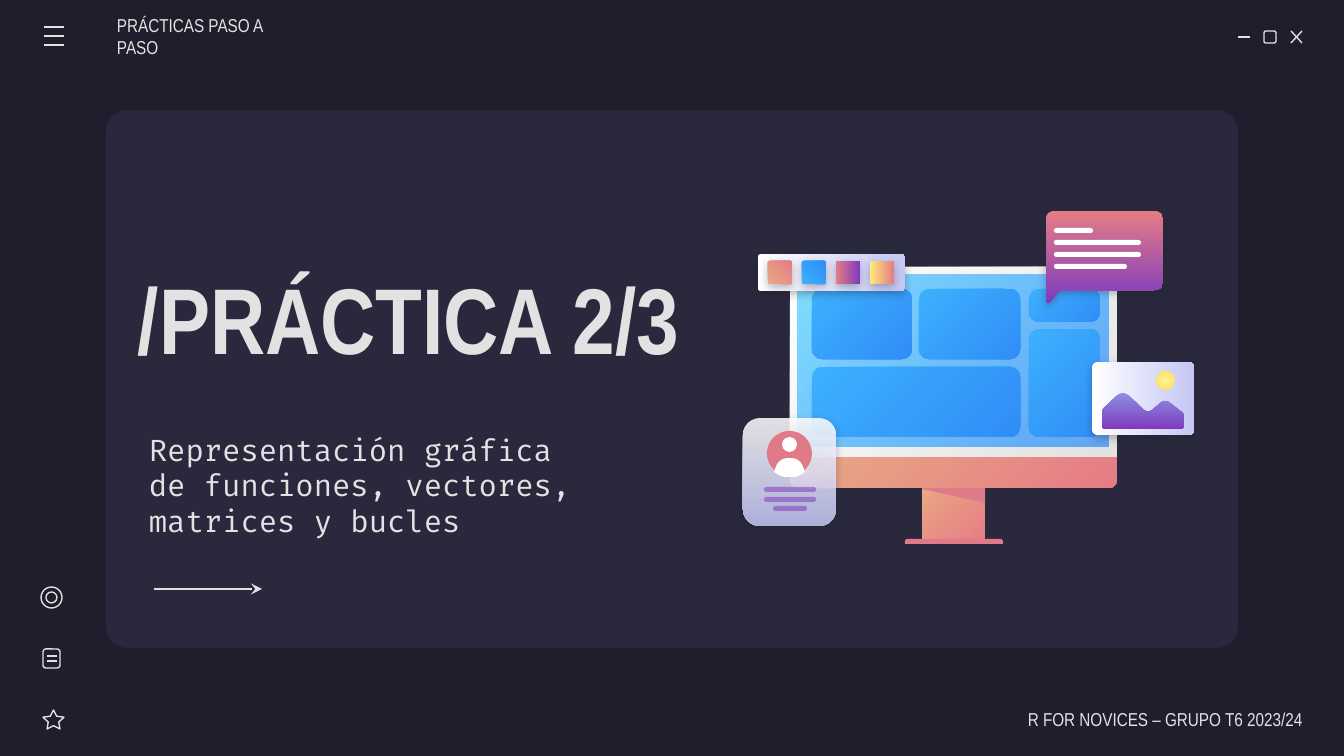
from lxml import etree
from pptx import Presentation, util as u
from pptx.dml.color import RGBColor
from pptx.enum import shapes, text
from pptx.oxml import ns

SCALE = 914400 / 134.4
SHAPE = shapes.MSO_SHAPE
DARK, PANEL, LIGHT, WHITE = "1E1E2C", "29283D", "E2E2E2", "FFFFFF"
ROSE, VIOLET_BAR = "E07A88", "7E3BBE8A"
# Gradients: two colours and a clockwise angle; None means radial.
CORAL = ("E9A984", "E57C85", 45)
BLUE = ("3DB0FD", "308EF7", 45)
SUNSET = ("E57C85", "7E3BBE", 90)
PAPER = (WHITE, "C5C7F4", 90)


def px(n):
    return u.Emu(round(n * SCALE))


def rgb(hex_color):
    return RGBColor.from_string(hex_color[:6])


def child(parent, tag, **attrs):
    return etree.SubElement(parent, ns.qn(tag), attrs)


def add_alpha(clr, hex_color):
    """Apply the optional last two hex digits as opacity."""
    if len(hex_color) == 8:
        child(clr, "a:alpha", val=str(round(int(hex_color[6:], 16) / 255 * 100) * 1000))


def style(sp, paint=None, shadow=False, line=None):
    sp.shadow.inherit = False
    spPr = sp._element.spPr
    if paint is None:
        sp.fill.background()
    elif isinstance(paint, str):
        sp.fill.solid()
        sp.fill.fore_color.rgb = rgb(paint)
        add_alpha(spPr.find(".//" + ns.qn("a:srgbClr")), paint)
    else:
        *colors, angle = paint
        sp.fill.gradient()
        for stop, c in zip(sp.fill.gradient_stops, colors):
            stop.color.rgb = rgb(c)
        for clr, c in zip(spPr.findall(".//" + ns.qn("a:srgbClr")), colors):
            add_alpha(clr, c)
        if angle is None:
            grad = spPr.find(ns.qn("a:gradFill"))
            grad.remove(grad.find(ns.qn("a:lin")))
            radial = child(grad, "a:path", path="circle")
            child(radial, "a:fillToRect", **dict.fromkeys("ltrb", "50000"))
        else:
            sp.fill.gradient_angle = 360 - angle
    if line:
        sp.line.color.rgb = rgb(line)
        sp.line.width = u.Pt(0.75)
    else:
        sp.line.fill.background()
    if shadow:
        outer = child(spPr.find(ns.qn("a:effectLst")), "a:outerShdw", blurRad="57150",
                      dist="19050", dir="5400000", algn="bl", rotWithShape="0")
        add_alpha(child(outer, "a:srgbClr", val=DARK), DARK + "4D")
    return sp


def shape(s, kind, x, y, w, h, paint=None, adj=(), **kw):
    sp = s.shapes.add_shape(kind, px(x), px(y), px(w), px(h))
    for i, value in enumerate(adj):
        sp.adjustments[i] = value
    return style(sp, paint, **kw)


def rounded(s, x, y, w, h, paint, radius, **kw):
    return shape(s, SHAPE.ROUNDED_RECTANGLE, x, y, w, h, paint, [radius / min(w, h)], **kw)


def sideways(s, x, y, w, h, paint):
    """Card turned by 270 degrees that covers the given box once turned."""
    sp = rounded(s, x + (w - h) / 2, y + (h - w) / 2, h, w, paint,
                 0.073 * min(w, h), shadow=True)
    sp.rotation = 270


def outline(s, x, y, corners, paint, **kw):
    """Closed polygon; each corner is (x, y, rounding length)."""
    points = []
    for i, (cx, cy, r) in enumerate(corners):
        ends = []
        for nx, ny, _ in (corners[i - 1], corners[(i + 1) % len(corners)]):
            k = r / ((nx - cx) ** 2 + (ny - cy) ** 2) ** 0.5
            ends.append((cx + (nx - cx) * k, cy + (ny - cy) * k))
        (ax, ay), (bx, by) = ends
        for t in ([n / 6 for n in range(7)] if r else [0]):
            p, q, v = (1 - t) ** 2, 2 * t * (1 - t), t * t
            points.append((px(x + p * ax + q * cx + v * bx), px(y + p * ay + q * cy + v * by)))
    form = s.shapes.build_freeform(*points[0])
    form.add_line_segments(points[1:], close=True)
    return style(form.convert_to_shape(), paint, **kw)


def line(s, x1, y1, x2, y2, arrow=False):
    c = s.shapes.add_connector(shapes.MSO_CONNECTOR.STRAIGHT, px(x1), px(y1), px(x2), px(y2))
    c.line.color.rgb = rgb(LIGHT)
    c.line.width = u.Pt(0.75)
    spPr = c._element.spPr
    if arrow:
        child(spPr.find(ns.qn("a:ln")), "a:tailEnd", type="stealth")
    child(spPr, "a:effectLst")


def label(s, x, y, w, h, words, size, font="Arial Narrow", bold=False,
          align=text.PP_ALIGN.LEFT, left=13, right=13):
    tf = s.shapes.add_textbox(px(x), px(y), px(w), px(h)).text_frame
    tf.word_wrap = True
    tf.vertical_anchor = text.MSO_ANCHOR.MIDDLE
    tf.margin_left, tf.margin_right = px(left), px(right)
    tf.margin_top = tf.margin_bottom = px(13)
    p = tf.paragraphs[0]
    p.alignment = align
    r = p.add_run()
    r.text = words
    r.font.size, r.font.name, r.font.bold = u.Pt(size), font, bold
    r.font.color.rgb = rgb(LIGHT)


def menu_icon(s, x, y):
    for dy in (0, 9, 18):
        line(s, x, y + dy, x + 20, y + dy)


def window_buttons(s, x, y):
    line(s, x, y + 6, x + 12, y + 6)
    shape(s, SHAPE.ROUNDED_RECTANGLE, x + 26, y, 12, 12, line=LIGHT)
    line(s, x + 53, y, x + 64, y + 12)
    line(s, x + 64, y, x + 53, y + 12)


def side_icons(s, x, y):
    shape(s, SHAPE.OVAL, x, y, 21, 21, line=LIGHT)
    shape(s, SHAPE.OVAL, x + 5, y + 5, 11, 11, line=LIGHT)
    shape(s, SHAPE.ROUNDED_RECTANGLE, x + 2, y + 62, 17, 19, line=LIGHT)
    for dy in (69, 74):
        line(s, x + 6, y + dy, x + 16, y + dy)
    shape(s, SHAPE.STAR_5_POINT, x + 2, y + 123, 21, 19, adj=[0.25], line=LIGHT)


def monitor(s, x, y):
    top_round = SHAPE.ROUND_2_SAME_RECTANGLE
    shape(s, SHAPE.RECTANGLE, x + 132, y + 218, 63, 58, CORAL)
    shape(s, top_round, x + 115, y + 272, 98, 5, ROSE, [0.5, 0])
    outline(s, x, y, [(132, 218, 0), (132, 222, 0), (195, 236, 0), (195, 218, 0)], ROSE)
    shape(s, top_round, x, y + 189, 327, 32, CORAL, [0, 0.25])
    shape(s, top_round, x, y, 327, 190, (WHITE, LIGHT, 45), [0.04, 0])
    shape(s, SHAPE.RECTANGLE, x + 8, y + 8, 310, 172, ("80DFFF", "318FFAB8", 45))
    for tx, ty, w, h in ((22, 22, 100, 70), (22, 100, 208, 70), (129, 22, 101, 70),
                         (239, 22, 71, 33), (239, 62, 71, 108)):
        rounded(s, x + tx, y + ty, w, h, BLUE, 10)


def speech_bubble(s, x, y):
    outline(s, x, y, [(0, 0, 9), (117, 0, 9), (117, 79, 9), (14, 79, 0), (3, 92, 2), (0, 92, 2)],
            SUNSET, shadow=True)
    for i, w in enumerate((39, 87, 87, 73)):
        rounded(s, x + 8, y + 17 + 12 * i, w, 5, WHITE, 2.5)


def profile_card(s, x, y):
    rounded(s, x, y, 93, 108, ("FFFFFFDB", "C5C7F4DB", 90), 17, shadow=True)
    shape(s, SHAPE.OVAL, x + 24, y + 13, 45, 45, ROSE)
    shape(s, SHAPE.OVAL, x + 39, y + 19, 15, 15, WHITE)
    outline(s, x, y, [(31, 54, 1), (36, 40, 10), (57, 40, 10), (62, 54, 1), (54, 59, 4),
                      (39, 59, 4)], WHITE)
    for dx, dy, w in ((21, 69, 52), (21, 79, 52), (30, 88, 34)):
        rounded(s, x + dx, y + dy, w, 5, VIOLET_BAR, 2.5)


def photo_card(s, x, y):
    sideways(s, x, y, 102, 73, PAPER)
    outline(s, x, y, [(10, 67, 4), (10, 48, 3), (31, 28, 9), (56, 52, 7), (73, 37, 7),
                      (92, 52, 3), (92, 67, 4)], ("8D90E1", "7E3BBE", 90))
    shape(s, SHAPE.OVAL, x + 64, y + 9, 19, 19, ("FFF68E", "FFD966", None))


def palette(s, x, y):
    sideways(s, x, y, 147, 37, PAPER)
    for i, paint in enumerate((CORAL, BLUE, SUNSET, ("FFEA7D", "E57C85", 90))):
        sideways(s, x + 10 + 34 * i, y + 7, 24, 23, paint)


def cover(s, x, y, w, h):
    rounded(s, x, y, w, h, PANEL, 0.04 * h)
    label(s, x + 30, y + 344, 465, 62,
          "Representación gráfica de funciones, vectores, matrices y bucles", 16, "Fira Code")
    label(s, x + 19, y + 89, 616, 237, "/PRÁCTICA 2/3", 50, bold=True)
    monitor(s, x + 684, y + 157)
    speech_bubble(s, x + 940, y + 101)
    profile_card(s, x + 637, y + 308)
    photo_card(s, x + 986, y + 252)
    palette(s, x + 652, y + 144)
    line(s, x + 48, y + 479, x + 156, y + 479, arrow=True)


def main():
    prs = Presentation()
    prs.slide_width, prs.slide_height = px(1344), px(756)
    s = prs.slides.add_slide(prs.slide_layouts[6])
    s.background.fill.solid()
    s.background.fill.fore_color.rgb = rgb(DARK)
    cover(s, 106, 110, 1132, 538)
    menu_icon(s, 44, 27)
    window_buttons(s, 1238, 31)
    side_icons(s, 41, 587)
    label(s, 117, 16, 192, 40, "PRÁCTICAS PASO A PASO", 10, left=0)
    label(s, 985, 699, 317, 40, "R FOR NOVICES – GRUPO T6 2023/24", 10,
          align=text.PP_ALIGN.RIGHT, right=0)
    prs.save("out.pptx")


if __name__ == "__main__":
    main()
